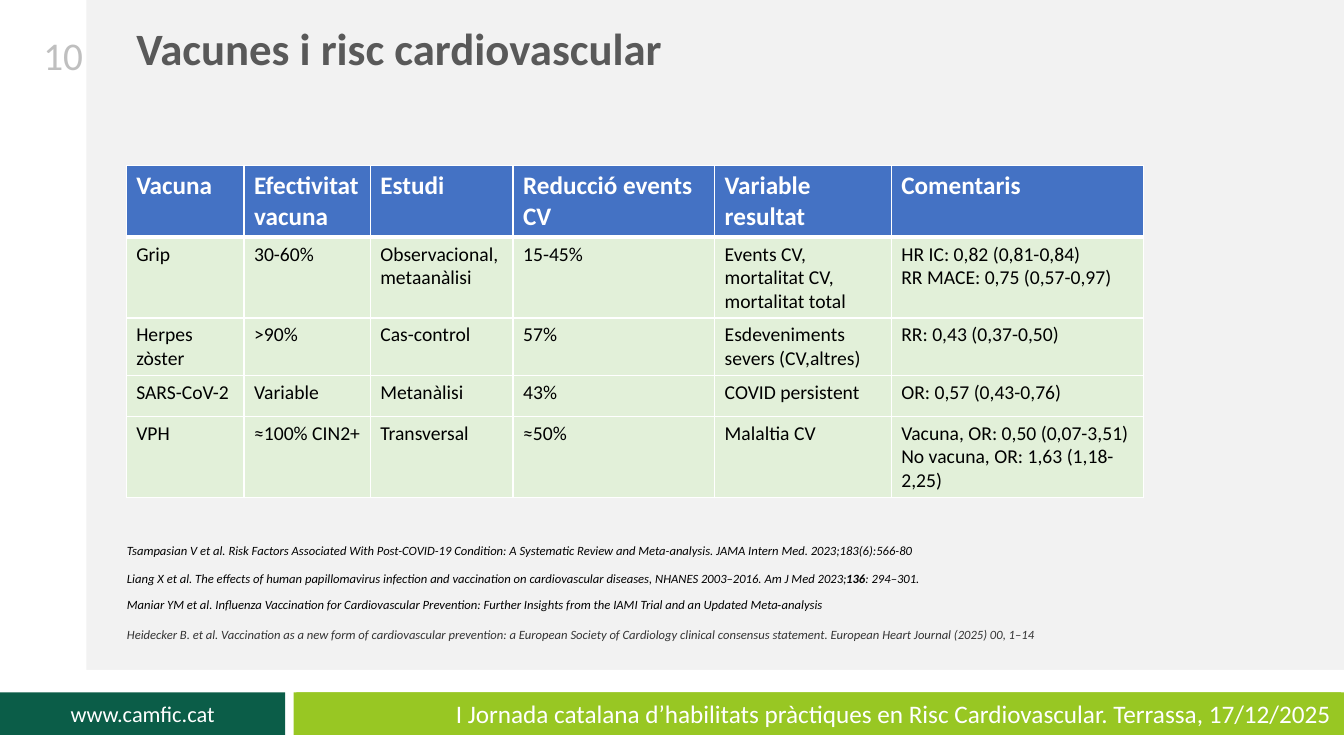
from lxml.etree import SubElement
from pptx import Presentation
from pptx.dml.color import RGBColor
from pptx.enum.shapes import MSO_SHAPE as Shape
from pptx.enum.text import MSO_ANCHOR as Anchor, MSO_AUTO_SIZE as AutoSize, PP_ALIGN as Align
from pptx.oxml.ns import qn
from pptx.util import Cm, Pt

COLORS = {
    "page": "F2F2F2", "white": "FFFFFF", "black": "000000", "lime": "98C723",
    "forest": "0B5D48", "title": "595959", "number": "BFBFBF", "source": "333333",
    "header": "4472C4", "cell": "E2F0D9",
}


def color(name):
    return RGBColor.from_string(COLORS[name])


def write(frame, text, size=14, ink="black", bold=False, italic=False,
          align=Align.LEFT, after=0, line=None):
    """Fill a text frame: lines become paragraphs, **marked** words are bold."""
    frame.word_wrap = True
    for index, content in enumerate(text.split("\n")):
        para = frame.paragraphs[0] if index == 0 else frame.add_paragraph()
        para.alignment = align
        para.space_before, para.space_after = Pt(0), Pt(after)
        if line:
            para.line_spacing = line
        for part, words in enumerate(content.split("**")):
            span = para.add_run()
            span.text = words
            font = span.font
            font.name, font.size = "Calibri", Pt(size)
            font.bold, font.italic = bold or part % 2 == 1, italic
            font.color.rgb = color(ink)


class SlideBuilder:
    def __init__(self, deck):
        self.page = deck.slides.add_slide(deck.slide_layouts[5])
        background = self.page.background.fill
        background.solid()
        background.fore_color.rgb = color("page")

    def title(self, text, left, top, width, height, **style):
        box = self.page.shapes.title
        box.left, box.top, box.width, box.height = map(Cm, (left, top, width, height))
        box.fill.solid()
        box.fill.fore_color.rgb = color("page")
        box.text_frame.auto_size = AutoSize.NONE
        box.text_frame.vertical_anchor = Anchor.TOP
        write(box.text_frame, text, **style)

    def band(self, fill, left, top, width, height, text="", **style):
        box = self.page.shapes.add_shape(
            Shape.RECTANGLE, *map(Cm, (left, top, width, height)))
        box.shadow.inherit = False
        box.fill.solid()
        box.fill.fore_color.rgb = color(fill)
        box.line.fill.background()
        if text:
            box.text_frame.vertical_anchor = Anchor.MIDDLE
            write(box.text_frame, text, ink="white", **style)

    def label(self, text, left, top, width, height, anchor=Anchor.TOP, **style):
        box = self.page.shapes.add_textbox(*map(Cm, (left, top, width, height)))
        box.text_frame.vertical_anchor = anchor
        write(box.text_frame, text, **style)

    def borders(self, cell, **widths):
        properties = cell._tc.get_or_add_tcPr()
        for side in "LRTB":
            line = SubElement(properties, qn(f"a:ln{side}"), w=str(Pt(widths.get(side, 1))))
            fill = SubElement(line, qn("a:solidFill"))
            SubElement(fill, qn("a:srgbClr"), val=COLORS["white"])

    def table(self, rows, left, top, widths, heights):
        table = self.page.shapes.add_table(
            len(rows), len(widths), Cm(left), Cm(top),
            Cm(sum(widths)), Cm(sum(heights))).table
        table.horz_banding = False
        for column, width in zip(table.columns, widths):
            column.width = Cm(width)
        for row, height in zip(table.rows, heights):
            row.height = Cm(height)
        for r, texts in enumerate(rows):
            for c, text in enumerate(texts):
                cell = table.cell(r, c)
                # A thick rule separates the header from the body
                self.borders(cell, T=3 if r == 1 else 1, B=3 if r == 0 else 1)
                cell.fill.solid()
                cell.fill.fore_color.rgb = color("cell" if r else "header")
                style = {} if r else {"size": 18, "ink": "white", "bold": True}
                write(cell.text_frame, text, **style)


ROWS = [
    ["Vacuna", "Efectivitat vacuna", "Estudi", "Reducció events CV",
     "Variable resultat", "Comentaris"],
    ["Grip", "30-60%", "Observacional, metaanàlisi", "15-45%",
     "Events CV, mortalitat CV, mortalitat total",
     "HR IC: 0,82 (0,81-0,84)\nRR MACE: 0,75 (0,57-0,97)"],
    ["Herpes zòster", ">90%", "Cas-control", "57%",
     "Esdeveniments severs (CV,altres)", "RR: 0,43 (0,37-0,50)"],
    ["SARS-CoV-2", "Variable", "Metanàlisi", "43%",
     "COVID persistent", "OR: 0,57 (0,43-0,76)"],
    ["VPH", "≈100% CIN2+", "Transversal", "≈50%", "Malaltia CV",
     "Vacuna, OR: 0,50 (0,07-3,51)\nNo vacuna, OR: 1,63 (1,18-2,25)"],
]

# Top, colour, space after and text of each reference
REFERENCES = [
    (13.56, "black", 0, "Tsampasian V et al. Risk Factors Associated With Post-COVID-19 Condition: "
     "A Systematic Review and Meta-analysis. JAMA Intern Med. 2023;183(6):566-80"),
    (14.27, "black", 0, "Liang X et al. The effects of human papillomavirus infection and vaccination "
     "on cardiovascular diseases, NHANES 2003–2016. Am J Med 2023;**136**: 294–301."),
    (14.91, "black", 0, "Maniar YM et al. Influenza Vaccination for Cardiovascular Prevention: "
     "Further Insights from the IAMI Trial and an Updated Meta‑analysis"),
    (15.67, "source", 6, "Heidecker B. et al. Vaccination as a new form of cardiovascular prevention: "
     "a European Society of Cardiology clinical consensus statement. "
     "European Heart Journal (2025) 00, 1–14"),
]


def main():
    deck = Presentation()
    deck.slide_width, deck.slide_height = Cm(33.87), Cm(19.05)
    slide = SlideBuilder(deck)

    # White margins and footer bands
    slide.band("white", 0, 0, 2.18, 19.05)
    slide.band("white", 0, 16.88, 33.87, 2.17)
    slide.band("lime", 7.47, 17.45, 26.4, 1.07)
    slide.band("forest", 0, 17.45, 7.19, 1.07, "www.camfic.cat",
               size=16, align=Align.CENTER)
    slide.band("lime", 7.4, 17.45, 26.4, 1.07,
               "I Jornada catalana d’habilitats pràctiques en Risc Cardiovascular. "
               "Terrassa, 17/12/2025", size=18, align=Align.RIGHT)

    # Title and page number
    slide.title("Vacunes i risc cardiovascular", 3.18, 0.56, 25.2, 1.22,
                size=32, ink="title", bold=True, line=0.9)
    slide.label("10", 0, 0.43, 2.34, 1.9, anchor=Anchor.MIDDLE,
                size=28, ink="number", align=Align.RIGHT)

    # Vaccine table
    slide.table(ROWS, 3.18, 4.17, [2.97, 3.18, 3.6, 5.08, 4.45, 6.35],
                [1.81, 2.01, 1.45, 1.03, 2.01])

    # References
    for top, ink, after, text in REFERENCES:
        slide.label(text, 2.95, top, 26.5, 0.64, size=9, ink=ink, italic=True, after=after)

    deck.save("out.pptx")


if __name__ == "__main__":
    main()
